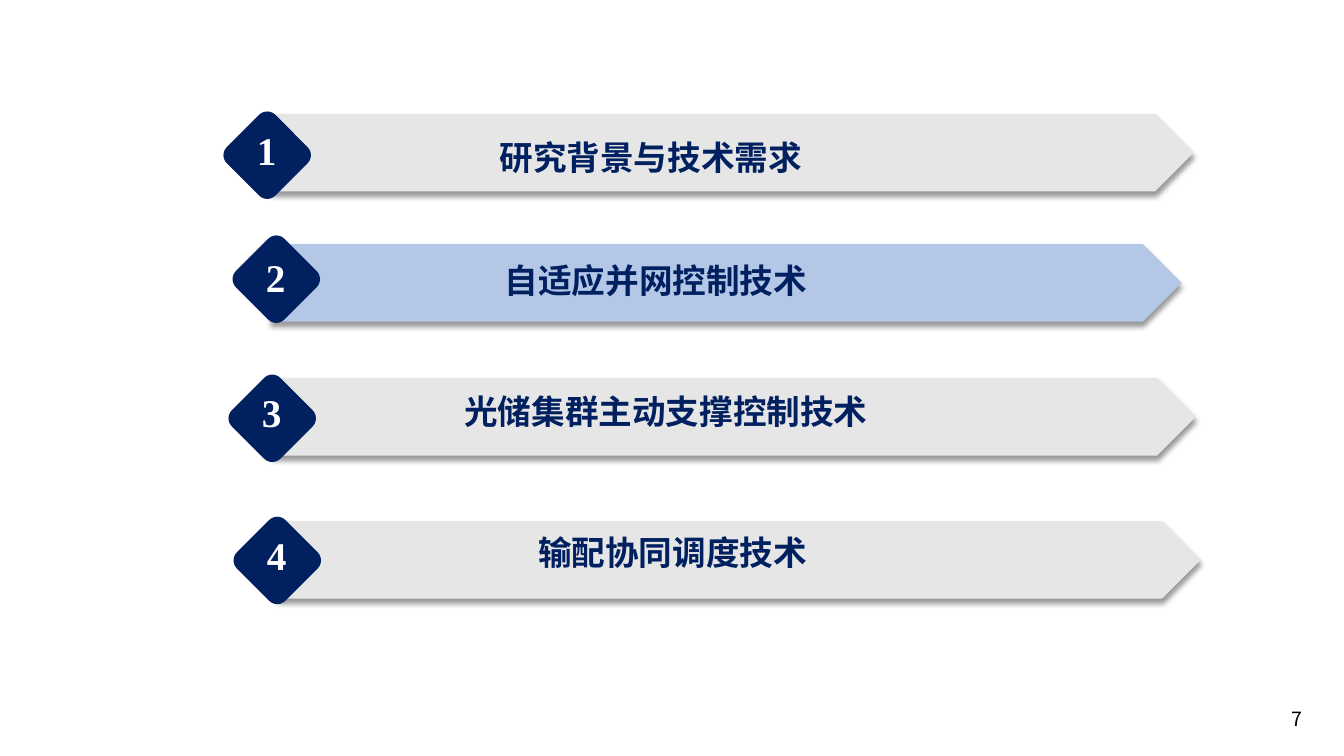
from lxml import etree
from pptx import Presentation
from pptx.dml.color import RGBColor
from pptx.enum.shapes import MSO_SHAPE
from pptx.enum.text import MSO_AUTO_SIZE, PP_ALIGN
from pptx.oxml.ns import qn
from pptx.util import Inches, Pt

COLORS = {"navy": "002060", "current": "B4C7E7", "grey": "E7E6E6",
          "white": "FFFFFF", "black": "000000"}
CJK_FONT = "Noto Sans CJK SC"
NUMBER_FORMAT = {"size": Pt(28), "name": "Times New Roman", "bold": True}
TITLE_FORMAT = {"size": Pt(24), "name": "Times New Roman", "bold": True}
PAGE_FORMAT = {"size": Pt(14), "name": CJK_FONT, "bold": False}

BAR_HEIGHT, BADGE_SIZE, NUMBER_INSET = 0.77, 0.68, 0.14

# Title, fill, bar (left, top, width), badge (left, top), number top,
# title box (left, top, width)
AGENDA = [
    ("研究背景与技术需求", "grey", (2.68, 1.13, 9.16), (2.31, 1.2), 1.2, (3.12, 1.31, 6.67)),
    ("自适应并网控制技术", "current", (2.68, 2.42, 9.04), (2.4, 2.43), 2.46, (3.75, 2.53, 5.51)),
    ("光储集群主动支撑控制技术", "grey", (2.7, 3.75, 9.16), (2.36, 3.81), 3.8, (4.02, 3.83, 5.17)),
    ("输配协同调度技术", "grey", (2.75, 5.17, 9.16), (2.41, 5.22), 5.22, (4.07, 5.23, 5.2)),
]


def rgb(color):
    return RGBColor.from_string(COLORS[color])


def add_block(slide, preset, left, top, width, height, color):
    block = slide.shapes.add_shape(
        preset, Inches(left), Inches(top), Inches(width), Inches(height))
    block.shadow.inherit = False
    block.fill.solid()
    block.fill.fore_color.rgb = rgb(color)
    block.line.fill.background()
    return block


def add_drop_shadow(block):
    effects = block.element.spPr.find(qn("a:effectLst"))
    shadow = etree.SubElement(
        effects, qn("a:outerShdw"), blurRad=str(Pt(4)), dist=str(Pt(3)),
        dir="5400000", algn="t", rotWithShape="0")
    tint = etree.SubElement(shadow, qn("a:srgbClr"), val=COLORS["black"])
    etree.SubElement(tint, qn("a:alpha"), val="40000")


def add_text(slide, text, left, top, width, height, color, font_format,
             align=PP_ALIGN.LEFT, wrap=True, auto_size=MSO_AUTO_SIZE.SHAPE_TO_FIT_TEXT):
    frame = slide.shapes.add_textbox(
        Inches(left), Inches(top), Inches(width), Inches(height)).text_frame
    frame.word_wrap = wrap
    frame.auto_size = auto_size
    paragraph = frame.paragraphs[0]
    paragraph.alignment = align
    run = paragraph.add_run()
    run.text = text
    for attribute, value in font_format.items():
        setattr(run.font, attribute, value)
    run.font.color.rgb = rgb(color)
    # East Asian typeface follows the Latin one
    latin = run.font._element.find(qn("a:latin"))
    latin.addnext(latin.makeelement(qn("a:ea"), {"typeface": CJK_FONT}))


def add_agenda_item(slide, number, title, color, bar_box, badge_corner, number_top, title_box):
    # Arrow bar
    bar = add_block(slide, MSO_SHAPE.PENTAGON, *bar_box, BAR_HEIGHT, color)
    add_drop_shadow(bar)
    # Numbered diamond
    badge = add_block(slide, MSO_SHAPE.ROUNDED_RECTANGLE, *badge_corner,
                      BADGE_SIZE, BADGE_SIZE, "navy")
    badge.rotation = 45
    add_text(slide, str(number), badge_corner[0] + NUMBER_INSET, number_top, 0.4, 0.57,
             "white", NUMBER_FORMAT, wrap=False)
    # Title
    add_text(slide, title, *title_box, 0.5, "navy", TITLE_FORMAT, align=PP_ALIGN.CENTER)


def main():
    deck = Presentation()
    deck.slide_width, deck.slide_height = Inches(13.33), Inches(7.5)
    slide = deck.slides.add_slide(deck.slide_layouts[6])

    for number, item in enumerate(AGENDA, start=1):
        add_agenda_item(slide, number, *item)

    # Page number
    add_text(slide, "7", 12.71, 6.96, 0.6, 0.4, "black", PAGE_FORMAT,
             auto_size=MSO_AUTO_SIZE.NONE)

    deck.save("out.pptx")


if __name__ == "__main__":
    main()
